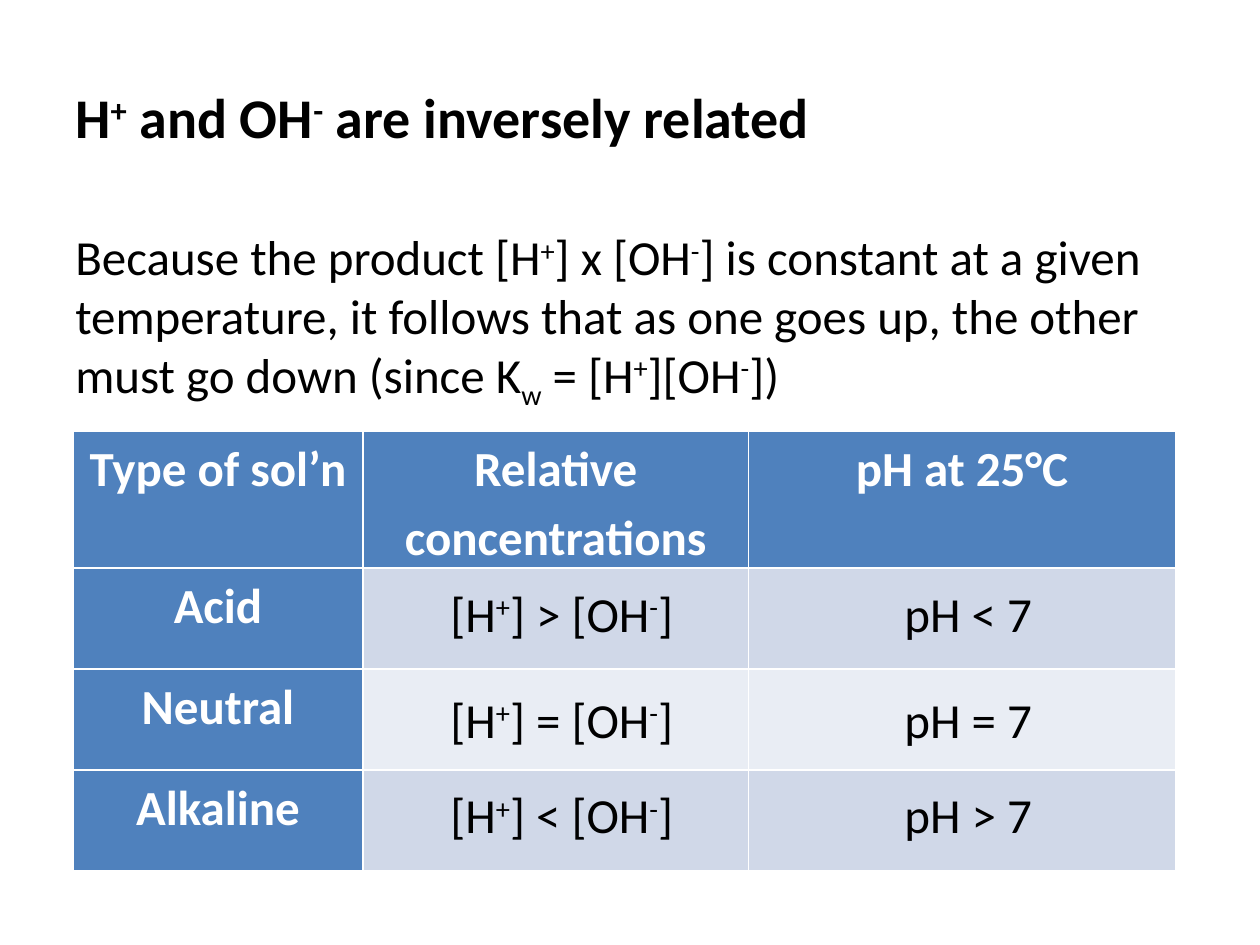
from dataclasses import dataclass

import pptx
import pptx.dml.color
import pptx.enum.text
import pptx.util

WIDTH, HEIGHT = 10, 7.5
FONT = "Calibri"
BLACK, WHITE, BLUE = "000000", "FFFFFF", "4F81BD"
BANDS = ("D0D8E8", "E9EDF4")
BASELINES = {"+": 30000, "-": 30000, "w": -25000}
LEFT = pptx.enum.text.PP_ALIGN.LEFT
CENTER = pptx.enum.text.PP_ALIGN.CENTER
TOP = pptx.enum.text.MSO_ANCHOR.TOP
MIDDLE = pptx.enum.text.MSO_ANCHOR.MIDDLE

MARGIN = 0.05 * WIDTH
HEADINGS = ("Type of sol’n", "Relative concentrations", "pH at 25°C")
COLUMN_WIDTHS = (2.3, 3.06, 3.39)
HEADER_HEIGHT, ROW_HEIGHT = 1.09, 0.8


@dataclass
class Solution:
    name: str
    relation: str
    ph: str
    label_top: float


SOLUTIONS = (
    Solution("Acid", ">", "pH < 7", 4.58),
    Solution("Neutral", "=", "pH = 7", 5.42),
    Solution("Alkaline", "<", "pH > 7", 6.18),
)


def rgb(color: str) -> pptx.dml.color.RGBColor:
    return pptx.dml.color.RGBColor.from_string(color)


def write(p, text: str, size: float = 28, color: str = BLACK, bold: bool = False) -> None:
    """Fill a paragraph; bars set off the raised and lowered parts of the text."""
    for part in text.split("|"):
        r = p.add_run()
        r.text = part
        r.font.name = FONT
        r.font.size = pptx.util.Pt(size)
        r.font.bold = bold
        r.font.color.rgb = rgb(color)
        if part in BASELINES:
            r.font._element.set("baseline", str(BASELINES[part]))


def add_text(slide, text: str, left: float, top: float, width: float, height: float,
             align=LEFT, anchor=TOP, size: float = 28, bold: bool = False) -> None:
    sp = slide.shapes.add_textbox(*map(pptx.util.Inches, (left, top, width, height)))
    tf = sp.text_frame
    tf.word_wrap = True
    tf.vertical_anchor = anchor
    p = tf.paragraphs[0]
    p.alignment = align
    write(p, text, size, bold=bold)


def fill_cell(cell, color: str, text: str = "") -> None:
    cell.fill.solid()
    cell.fill.fore_color.rgb = rgb(color)
    if text:
        cell.margin_left = cell.margin_right = pptx.util.Inches(0.07)
        cell.margin_top = cell.margin_bottom = 0
        p = cell.text_frame.paragraphs[0]
        p.alignment = CENTER
        p.line_spacing = 1.15
        write(p, text, color=WHITE, bold=True)


def add_solution_table(slide) -> None:
    heights = [HEADER_HEIGHT] + [ROW_HEIGHT] * len(SOLUTIONS)
    frame = slide.shapes.add_table(
        len(heights), len(COLUMN_WIDTHS),
        *map(pptx.util.Inches, (0.58, 3.42, sum(COLUMN_WIDTHS), sum(heights))))
    table = frame.table
    table.first_col = True
    for column, width in zip(table.columns, COLUMN_WIDTHS):
        column.width = pptx.util.Inches(width)
    for row, height in zip(table.rows, heights):
        row.height = pptx.util.Inches(height)
    for i, heading in enumerate(HEADINGS):
        fill_cell(table.cell(0, i), BLUE, heading)
    for i, solution in enumerate(SOLUTIONS):
        fill_cell(table.cell(i + 1, 0), BLUE, solution.name)
        for j in range(1, len(HEADINGS)):
            fill_cell(table.cell(i + 1, j), BANDS[i % 2])


def main() -> None:
    prs = pptx.Presentation()
    prs.slide_width = pptx.util.Inches(WIDTH)
    prs.slide_height = pptx.util.Inches(HEIGHT)
    slide = prs.slides.add_slide(prs.slide_layouts[6])

    content_width = WIDTH - 2 * MARGIN
    add_text(slide, "H|+| and OH|-| are inversely related",
             MARGIN, 0.04 * HEIGHT, content_width, HEIGHT / 6,
             anchor=MIDDLE, size=32, bold=True)
    add_text(slide, "Because the product [H|+|] x [OH|-|] is constant at a given "
             "temperature, it follows that as one goes up, the other must go down "
             "(since K|w| = [H|+|][OH|-|])",
             MARGIN, 1.75, content_width, 1.58)
    add_solution_table(slide)
    for solution in SOLUTIONS:
        add_text(slide, f"[H|+|] {solution.relation} [OH|-|]",
                 WIDTH / 3, solution.label_top, 2.25, 0.57, align=CENTER)
        add_text(slide, solution.ph, 7.08, solution.label_top, 1.5, 0.57)

    prs.save("out.pptx")


if __name__ == "__main__":
    main()
